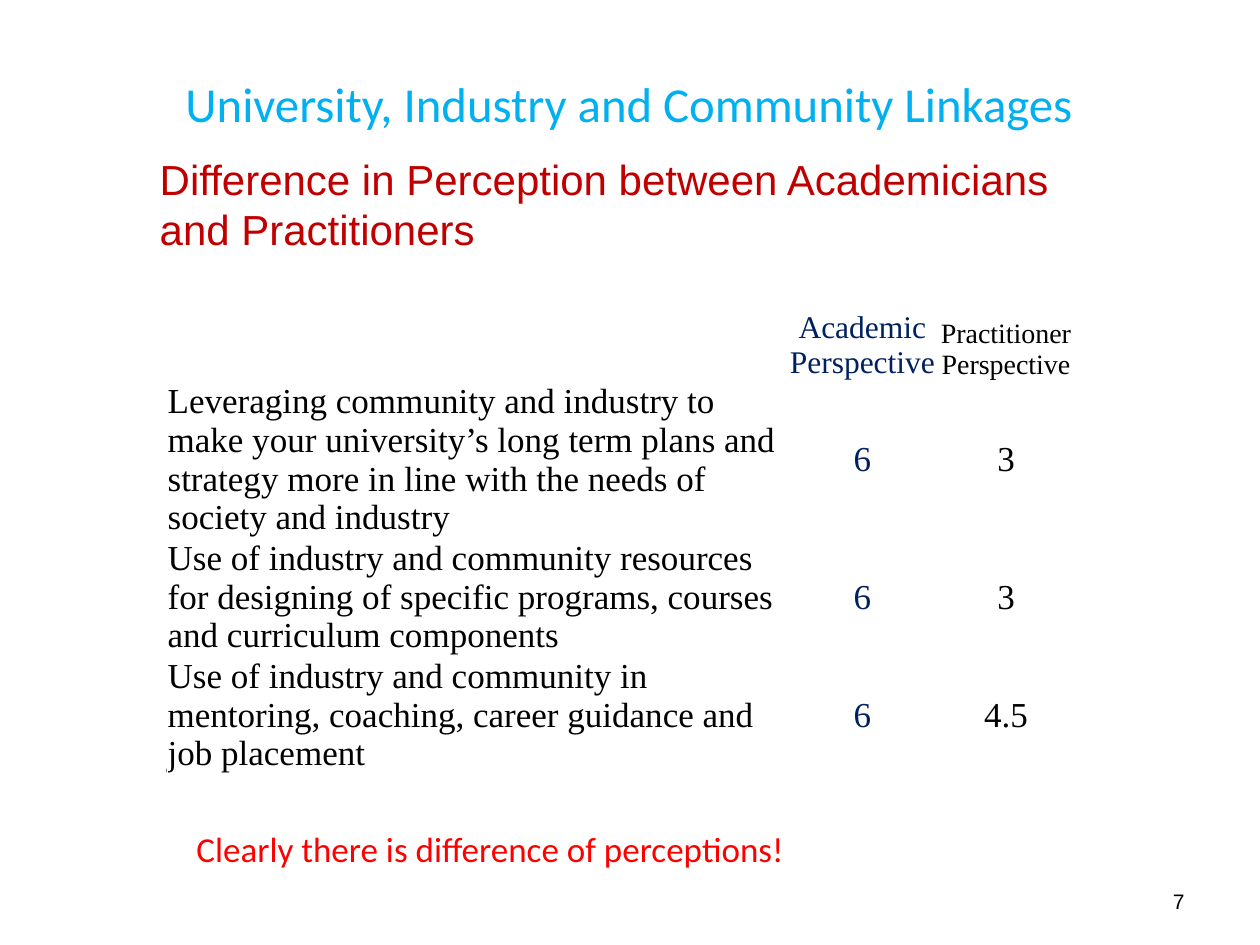
from dataclasses import dataclass

from pptx import Presentation
from pptx.dml.color import RGBColor
from pptx.enum.text import MSO_ANCHOR, MSO_AUTO_SIZE, PP_ALIGN
from pptx.util import Cm, Pt

LEFT, CENTER, RIGHT = PP_ALIGN.LEFT, PP_ALIGN.CENTER, PP_ALIGN.RIGHT
TOP, MIDDLE, BOTTOM = MSO_ANCHOR.TOP, MSO_ANCHOR.MIDDLE, MSO_ANCHOR.BOTTOM
GROW, FIXED = MSO_AUTO_SIZE.SHAPE_TO_FIT_TEXT, MSO_AUTO_SIZE.NONE


@dataclass(frozen=True)
class Style:
    font: str
    size: float
    color: str


@dataclass(frozen=True)
class Theme:
    title: Style = Style("Calibri", 27.9, "00B0F0")
    subtitle: Style = Style("Arial", 24, "C00000")
    conclusion: Style = Style("Calibri", 20, "FF0000")
    number: Style = Style("Arial", 12, "000000")
    academic_head: Style = Style("Times New Roman", 18, "002060")
    practitioner_head: Style = Style("Times New Roman", 16, "000000")
    academic: Style = Style("Times New Roman", 20, "002060")
    plain: Style = Style("Times New Roman", 20, "000000")


THEME = Theme()

TITLE = "University, Industry and Community Linkages"
TITLE_AREA = (3.18, 0.76, 19, 2.62)

TEXT_BOXES = [
    ("7", (18.21, 17.65, 5.92, 1.02), THEME.number, RIGHT, MIDDLE, FIXED),
    ("Clearly there is difference of perceptions!",
     (3.71, 16.56, 16.51, 1.88), THEME.conclusion, LEFT, TOP, GROW),
    ("Difference in Perception between Academicians and Practitioners",
     (2.97, 2.97, 19.74, 2.31), THEME.subtitle, LEFT, TOP, GROW),
]

TABLE_ROWS = [
    ("", "Academic\nPerspective", "Practitioner\nPerspective"),
    ("Leveraging community and industry to make your university’s long term "
     "plans and strategy more in line with the needs of society and industry",
     "6", "3"),
    ("Use of industry and community resources for designing of specific "
     "programs, courses and curriculum components", "6", "3"),
    ("Use of industry and community in mentoring, coaching, career guidance "
     "and job placement", "6", "4.5"),
]
TABLE_LEFT, TABLE_TOP = 3.38, 5.33
COLUMN_WIDTHS = (12.47, 3.07, 2.72)
ROW_HEIGHTS = (2.34, 2.79, 1.88, 1.88)
HEAD_STYLES = (THEME.plain, THEME.academic_head, THEME.practitioner_head)
BODY_STYLES = (THEME.plain, THEME.academic, THEME.plain)


def write(frame, text, style, align):
    frame.text = text
    for para in frame.paragraphs:
        para.alignment = align
        para.font.size = Pt(style.size)
        for span in para.runs:
            span.font.name = style.font
            span.font.size = Pt(style.size)
            span.font.color.rgb = RGBColor.from_string(style.color)


def add_title(page):
    title = page.shapes.title
    title.left, title.top, title.width, title.height = map(Cm, TITLE_AREA)
    title.text_frame.vertical_anchor = MIDDLE
    write(title.text_frame, TITLE, THEME.title, CENTER)


def add_text_box(page, text, area, style, align, anchor, sizing):
    frame = page.shapes.add_textbox(*map(Cm, area)).text_frame
    frame.word_wrap = True
    frame.auto_size = sizing
    frame.vertical_anchor = anchor
    write(frame, text, style, align)


def add_perception_table(page):
    table = page.shapes.add_table(
        len(TABLE_ROWS), len(COLUMN_WIDTHS), Cm(TABLE_LEFT), Cm(TABLE_TOP),
        Cm(sum(COLUMN_WIDTHS)), Cm(sum(ROW_HEIGHTS))).table
    table.first_row = table.horz_banding = False
    for column, width in zip(table.columns, COLUMN_WIDTHS):
        column.width = Cm(width)
    for row, height in zip(table.rows, ROW_HEIGHTS):
        row.height = Cm(height)
    for row_index, texts in enumerate(TABLE_ROWS):
        styles = BODY_STYLES if row_index else HEAD_STYLES
        for column_index, (text, style) in enumerate(zip(texts, styles)):
            cell = table.cell(row_index, column_index)
            cell.fill.background()
            cell.margin_left = cell.margin_right = cell.margin_bottom = 0
            cell.margin_top = Cm(0.03)
            is_score = row_index and column_index
            cell.vertical_anchor = MIDDLE if is_score else BOTTOM
            write(cell.text_frame, text, style, CENTER if column_index else LEFT)


def main():
    deck = Presentation()
    deck.slide_width, deck.slide_height = Cm(25.4), Cm(19.05)
    page = deck.slides.add_slide(deck.slide_layouts.get_by_name("Title Only"))
    add_title(page)
    add_perception_table(page)
    for text_box in TEXT_BOXES:
        add_text_box(page, *text_box)
    deck.save("out.pptx")


if __name__ == "__main__":
    main()
